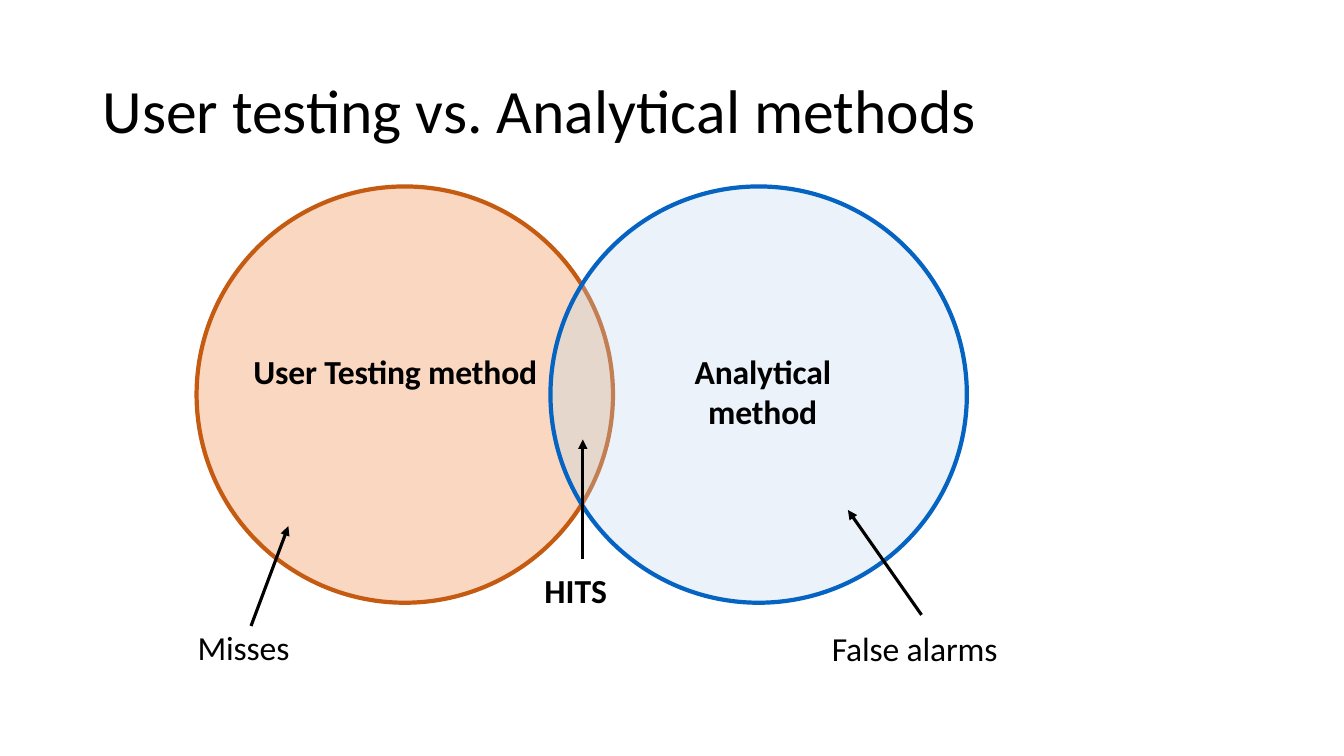
import pptx
import pptx.dml.color
import pptx.enum.shapes
import pptx.enum.text
import pptx.oxml.ns
import pptx.util
from lxml import etree

RGBColor = pptx.dml.color.RGBColor
Align = pptx.enum.text.PP_ALIGN
Anchor = pptx.enum.text.MSO_ANCHOR
qn = pptx.oxml.ns.qn

PX = 9144
FONT = "Calibri"
BLACK = RGBColor(0x00, 0x00, 0x00)
ORANGE = RGBColor(0xED, 0x7D, 0x31)
RUST = RGBColor(0xC5, 0x5A, 0x11)
PALE_BLUE = RGBColor(0xBD, 0xD7, 0xEE)
BLUE = RGBColor(0x05, 0x63, 0xC1)

CIRCLE_TOP = 185
CIRCLE_SIZE = 413


def px(*lengths):
    return [pptx.util.Emu(length * PX) for length in lengths]


def add_text(slide, text, box, size=24, bold=False, align=Align.LEFT,
             anchor=Anchor.TOP, insets=(0, 1, 0, 0), indent=1,
             before=1, line_spacing=1.0, tracking=-10):
    frame = slide.shapes.add_textbox(*px(*box)).text_frame
    frame.word_wrap = True
    frame.vertical_anchor = anchor
    (frame.margin_left, frame.margin_top,
     frame.margin_right, frame.margin_bottom) = px(*insets)
    paragraph = frame.paragraphs[0]
    paragraph.alignment = align
    paragraph.space_before = pptx.util.Pt(before)
    paragraph.line_spacing = line_spacing
    properties = paragraph._p.get_or_add_pPr()
    properties.set("marL", str(indent * PX))
    properties.set("indent", "0")
    run = paragraph.add_run()
    run.text = text
    run.font.name = FONT
    run.font.size = pptx.util.Pt(size)
    run.font.bold = bold
    run.font.color.rgb = BLACK
    run._r.get_or_add_rPr().set("spc", str(tracking))


def add_circle(slide, left, fill, outline):
    circle = slide.shapes.add_shape(
        pptx.enum.shapes.MSO_SHAPE.OVAL,
        *px(left, CIRCLE_TOP, CIRCLE_SIZE, CIRCLE_SIZE))
    circle.shadow.inherit = False
    circle.fill.solid()
    circle.fill.fore_color.rgb = fill
    colour = circle._element.spPr.find(qn("a:solidFill"))[0]
    etree.SubElement(colour, qn("a:alpha"), val="30000")
    circle.line.color.rgb = outline
    circle.line.width = pptx.util.Pt(3)


def add_arrow(slide, start, end):
    arrow = slide.shapes.add_connector(
        pptx.enum.shapes.MSO_CONNECTOR.STRAIGHT, *px(*start, *end))
    arrow.line.color.rgb = BLACK
    arrow.line.width = pptx.util.Pt(2.25)
    etree.SubElement(arrow.line._get_or_add_ln(), qn("a:tailEnd"), type="triangle")
    etree.SubElement(arrow._element.spPr, qn("a:effectLst"))


def main():
    deck = pptx.Presentation()
    deck.slide_width, deck.slide_height = px(1333, 750)
    slide = deck.slides.add_slide(deck.slide_layouts[6])

    add_text(slide, "User testing vs. Analytical methods", (92, 40, 1150, 145),
             size=44, anchor=Anchor.MIDDLE, insets=(10, 5, 10, 5),
             indent=0, before=0, line_spacing=0.9, tracking=0)

    add_circle(slide, 195, ORANGE, RUST)
    add_circle(slide, 546, PALE_BLUE, BLUE)

    add_text(slide, "User Testing method", (249, 347, 285, 89),
             bold=True, align=Align.CENTER)
    add_text(slide, "Analytical method", (615, 347, 243, 89),
             bold=True, align=Align.CENTER, indent=40)
    add_text(slide, "Misses", (195, 621, 182, 45))
    add_text(slide, "False alarms", (824, 622, 344, 45))
    add_text(slide, "HITS", (539, 564, 96, 45), bold=True, tracking=0)

    add_arrow(slide, (249, 621), (286, 522))
    add_arrow(slide, (914, 610), (841, 506))
    add_arrow(slide, (578, 555), (578, 436))

    deck.save("out.pptx")


if __name__ == "__main__":
    main()
